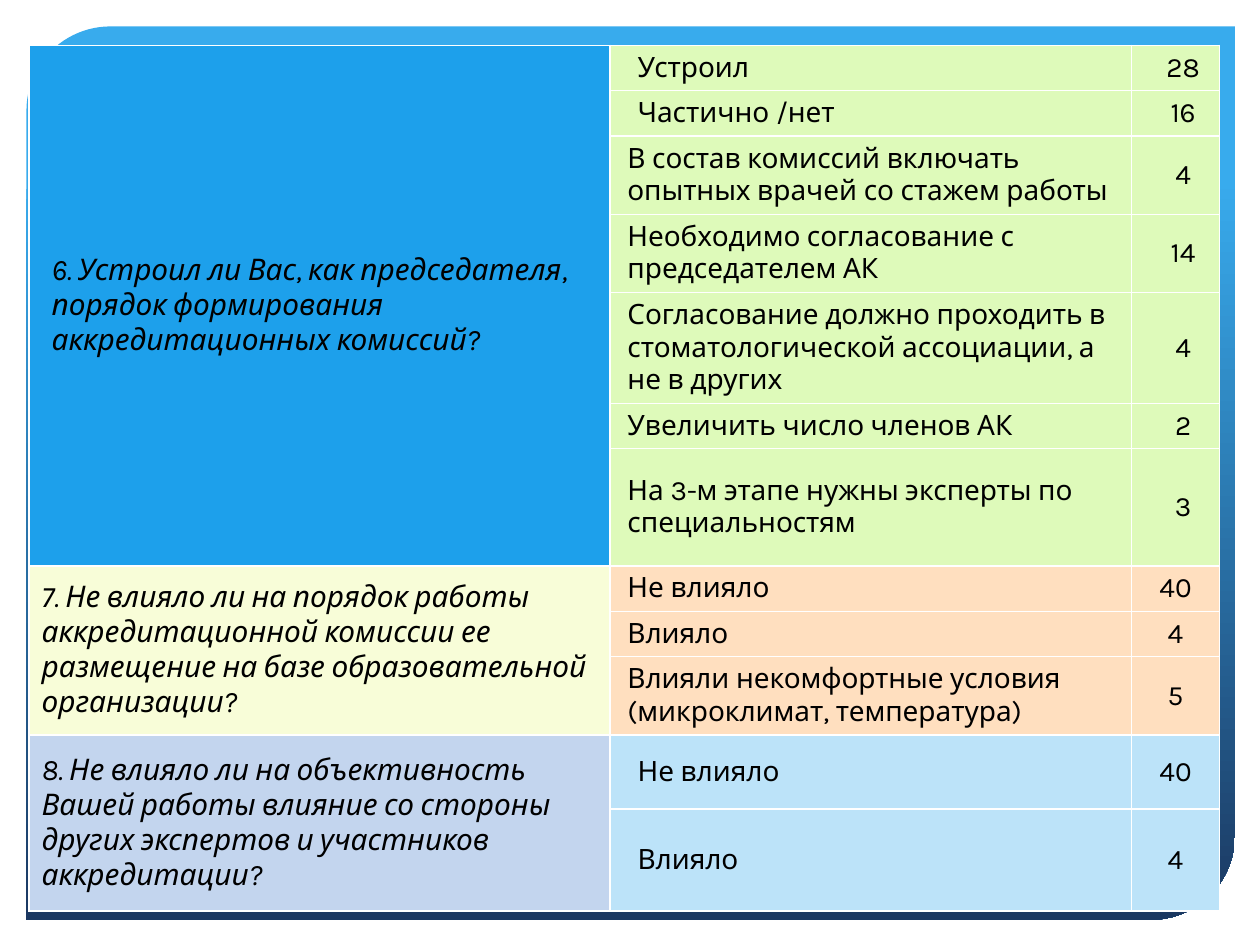
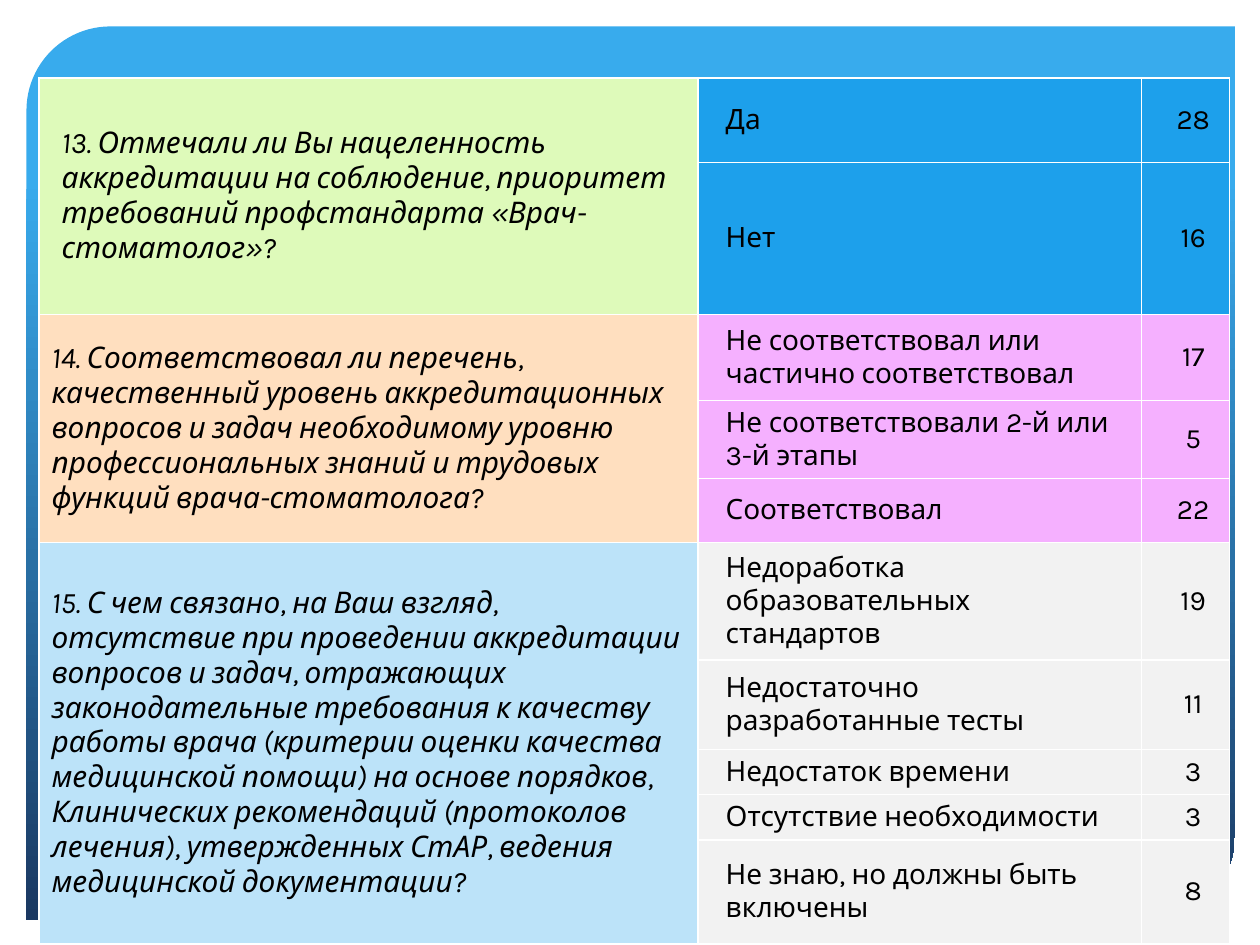
from dataclasses import dataclass

from lxml import etree
from pptx import Presentation
from pptx.dml.color import RGBColor
from pptx.enum.shapes import MSO_SHAPE
from pptx.enum.text import MSO_ANCHOR, PP_ALIGN
from pptx.oxml.ns import qn
from pptx.util import Inches, Pt

LEFT, CENTER = PP_ALIGN.LEFT, PP_ALIGN.CENTER
MIDDLE = MSO_ANCHOR.MIDDLE
PANEL = MSO_SHAPE.ROUND_2_DIAG_RECTANGLE


@dataclass(frozen=True)
class Theme:
    font: str = "Karla"
    text: str = "000000"
    border: str = "FFFFFF"
    panel_top: str = "38ABED"
    panel_bottom: str = "1B3861"
    blue: str = "1DA0EB"
    green: str = "DEFABA"
    cream: str = "F8FDD8"
    peach: str = "FFDFBF"
    lavender: str = "C3D5EE"
    sky: str = "BCE3F9"
    pink: str = "F5B0FF"
    grey: str = "F2F2F2"
    question_size: int = 17
    answer_size: int = 16
    border_width: int = 1


theme = Theme()
NONE, NARROW, MEDIUM, WIDE = 0, 0.04, 0.08, 0.12

surveys = [
    {
        "origin": (0.23, 0.36),
        "columns": (4.61, 4.14, 0.7),
        "questions": [
            {
                "text": "6. Устроил ли Вас, как председателя, порядок формирования аккредитационных комиссий?",
                "indent": MEDIUM, "fill": theme.blue, "answer_fill": theme.green, "count_indent": WIDE,
                "answers": [
                    ("Устроил", 28, 0.36, WIDE),
                    ("Частично /нет", 16, 0.36, WIDE),
                    ("В состав комиссий включать опытных врачей со стажем работы", 4, 0.62, NARROW),
                    ("Необходимо согласование с председателем АК", 14, 0.62, NARROW),
                    ("Согласование должно проходить в стоматологической ассоциации, а не в других", 4, 0.88, NARROW),
                    ("Увеличить число членов АК", 2, 0.36, NARROW),
                    ("На 3-м этапе нужны эксперты по специальностям", 3, 0.62, NARROW),
                ],
            },
            {
                "text": "7. Не влияло ли на порядок работы аккредитационной комиссии ее размещение на базе "
                        "образовательной организации?",
                "indent": NONE, "fill": theme.cream, "answer_fill": theme.peach, "count_indent": NONE,
                "answers": [
                    ("Не влияло", 40, 0.36, NARROW),
                    ("Влияло", 4, 0.36, NARROW),
                    ("Влияли некомфортные условия (микроклимат, температура)", 5, 0.62, NARROW),
                ],
            },
            {
                "text": "8. Не влияло ли на объективность Вашей работы влияние со стороны других экспертов "
                        "и участников аккредитации?",
                "indent": NONE, "fill": theme.lavender, "answer_fill": theme.sky, "count_indent": NONE,
                "answers": [
                    ("Не влияло", 40, 0.59, WIDE),
                    ("Влияло", 4, 0.81, WIDE),
                ],
            },
        ],
    },
    {
        "origin": (0.31, 0.62),
        "columns": (5.23, 3.52, 0.7),
        "questions": [
            {
                "text": "13. Отмечали ли Вы нацеленность аккредитации на соблюдение, приоритет требований "
                        "профстандарта «Врач-стоматолог»?",
                "indent": MEDIUM, "fill": theme.green, "answer_fill": theme.blue, "count_indent": WIDE,
                "answers": [
                    ("Да", 28, 0.67, WIDE),
                    ("Нет", 16, 0.67, WIDE),
                ],
            },
            {
                "text": "14. Соответствовал ли перечень, качественный уровень аккредитационных вопросов и задач "
                        "необходимому уровню профессиональных знаний и трудовых функций врача-стоматолога?",
                "indent": NONE, "fill": theme.peach, "answer_fill": theme.pink, "count_indent": WIDE,
                "answers": [
                    ("Не соответствовал или частично соответствовал", 17, 0.68, WIDE),
                    ("Не соответствовали 2-й или 3-й этапы", 5, 0.59, WIDE),
                    ("Соответствовал", 22, 0.51, WIDE),
                ],
            },
            {
                "text": "15. С чем связано, на Ваш взгляд, отсутствие при проведении аккредитации вопросов и задач, "
                        "отражающих законодательные требования к качеству работы врача (критерии оценки качества "
                        "медицинской помощи) на основе порядков, Клинических рекомендаций (протоколов лечения), "
                        "утвержденных СтАР, ведения медицинской документации?",
                "indent": NONE, "fill": theme.sky, "answer_fill": theme.grey, "count_indent": WIDE,
                "answers": [
                    ("Недоработка образовательных стандартов", 19, 0.93, WIDE),
                    ("Недостаточно разработанные тесты", 11, 0.71, WIDE),
                    ("Недостаток времени", 3, 0.36, WIDE),
                    ("Отсутствие необходимости", 3, 0.36, WIDE),
                    ("Не знаю, но должны быть включены", 8, 0.82, WIDE),
                ],
            },
        ],
    },
]


def paint_cell(cell, fill):
    properties = cell._tc.get_or_add_tcPr()
    for side in ("a:lnL", "a:lnR", "a:lnT", "a:lnB"):
        edge = etree.SubElement(properties, qn(side), w=str(Pt(theme.border_width)))
        solid = etree.SubElement(edge, qn("a:solidFill"))
        etree.SubElement(solid, qn("a:srgbClr"), val=theme.border)
    cell.fill.solid()
    cell.fill.fore_color.rgb = RGBColor.from_string(fill)
    cell.vertical_anchor = MIDDLE


def write_cell(cell, text, indent, align, size, italic):
    paragraph = cell.text_frame.paragraphs[0]
    paragraph.alignment = align
    paragraph._p.get_or_add_pPr().set("marL", str(Inches(indent)))
    run = paragraph.add_run()
    run.text = text
    run.font.color.rgb = RGBColor.from_string(theme.text)
    for name, value in {"name": theme.font, "size": Pt(size), "italic": italic, "bold": False}.items():
        setattr(run.font, name, value)


presentation = Presentation()
presentation.slide_width, presentation.slide_height = Inches(10), Inches(7.5)

for survey in surveys:
    slide = presentation.slides.add_slide(presentation.slide_layouts[6])

    panel = slide.shapes.add_shape(PANEL, Inches(0.21), Inches(0.21), Inches(9.59), Inches(7.09))
    panel.shadow.inherit = False
    panel.adjustments[0], panel.adjustments[1] = 0.094, 0
    panel.line.fill.background()
    panel.fill.gradient()
    panel.fill.gradient_angle = 270
    gradient = ((0.17, theme.panel_top), (1, theme.panel_bottom))
    for stop, (position, color) in zip(panel.fill.gradient_stops, gradient):
        stop.position = position
        stop.color.rgb = RGBColor.from_string(color)

    heights = [height for question in survey["questions"] for _, _, height, _ in question["answers"]]
    left, top = survey["origin"]
    results = slide.shapes.add_table(
        len(heights), len(survey["columns"]), Inches(left), Inches(top),
        Inches(sum(survey["columns"])), Inches(sum(heights))).table
    results.first_row = results.horz_banding = False
    for column, width in zip(results.columns, survey["columns"]):
        column.width = Inches(width)
    for row, height in zip(results.rows, heights):
        row.height = Inches(height)

    first = 0
    for question in survey["questions"]:
        last = first + len(question["answers"]) - 1
        for row, (answer, count, _, indent) in enumerate(question["answers"], first):
            paint_cell(results.cell(row, 0), question["fill"])
            paint_cell(results.cell(row, 1), question["answer_fill"])
            paint_cell(results.cell(row, 2), question["answer_fill"])
            write_cell(results.cell(row, 1), answer, indent, LEFT, theme.answer_size, False)
            write_cell(results.cell(row, 2), str(count), question["count_indent"], CENTER, theme.answer_size, False)
        results.cell(first, 0).merge(results.cell(last, 0))
        write_cell(results.cell(first, 0), question["text"], question["indent"], LEFT, theme.question_size, True)
        first = last + 1

presentation.save("out.pptx")
